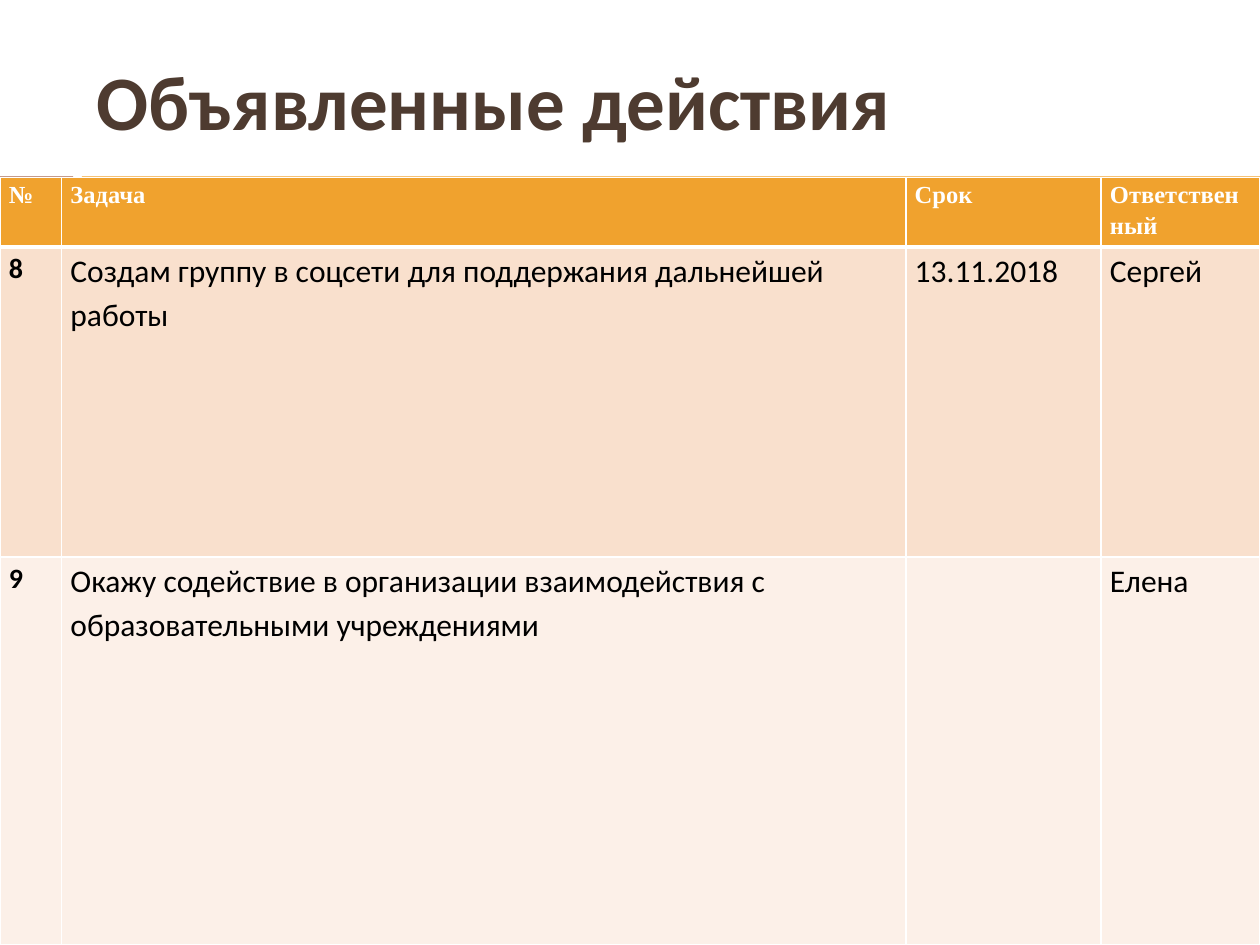
from dataclasses import dataclass

from lxml.etree import SubElement
from pptx import Presentation
from pptx.dml.color import RGBColor as Rgb
from pptx.enum.shapes import MSO_SHAPE as Shape
from pptx.enum.text import MSO_ANCHOR as Anchor
from pptx.oxml.ns import qn
from pptx.util import Inches, Pt


@dataclass(frozen=True)
class TextStyle:
    font: str
    size: int
    color: str
    bold: bool = False


@dataclass(frozen=True)
class Theme:
    title: TextStyle = TextStyle("Calibri", 44, "4E3B30", True)
    header: TextStyle = TextStyle("Times New Roman", 14, "FFFFFF", True)
    number: TextStyle = TextStyle("Calibri", 16, "000000", True)
    body: TextStyle = TextStyle("Calibri", 18, "000000")
    accent_fill: str = "A5644E"
    header_fill: str = "F0A22E"
    odd_fill: str = "F9E0CD"
    even_fill: str = "FCF0E8"
    border: str = "FFFFFF"
    thin: int = 1
    thick: int = 3


@dataclass(frozen=True)
class Band:
    left: float
    width: float
    fill: str


@dataclass(frozen=True)
class TableRow:
    texts: tuple[str, ...]
    height: float
    fill: str
    first_style: TextStyle
    style: TextStyle


THEME = Theme()
BANDS = (Band(0, 0.58, THEME.accent_fill), Band(0.65, 9.35, THEME.header_fill))
COLUMN_WIDTHS = (0.49, 6.7, 1.55, 1.26)
ROWS = (
    TableRow(("№", "Задача", "Срок", "Ответственный"),
             0.55, THEME.header_fill, THEME.header, THEME.header),
    TableRow(("8", "Создам группу в соцсети для поддержания дальнейшей работы",
              "13.11.2018", "Сергей"),
             2.46, THEME.odd_fill, THEME.number, THEME.body),
    TableRow(("9", "Окажу содействие в организации взаимодействия с "
              "образовательными учреждениями", "", "Елена"),
             3.08, THEME.even_fill, THEME.number, THEME.body),
)


def style_text(para, style: TextStyle) -> None:
    for span in para.runs:
        span.font.name = style.font
        span.font.size = Pt(style.size)
        span.font.bold = style.bold
        span.font.color.rgb = Rgb.from_string(style.color)


def add_band(page, band: Band) -> None:
    bar = page.shapes.add_shape(
        Shape.RECTANGLE, Inches(band.left), Inches(1.4), Inches(band.width), Inches(0.25)
    )
    bar.shadow.inherit = False
    bar.fill.solid()
    bar.fill.fore_color.rgb = Rgb.from_string(band.fill)
    bar.line.fill.background()


def add_title(page, text: str) -> None:
    box = page.shapes.add_textbox(Inches(0.67), Inches(0.25), Inches(8.92), Inches(1.08))
    frame = box.text_frame
    frame.word_wrap = True
    frame.vertical_anchor = Anchor.MIDDLE
    frame.text = text
    style_text(frame.paragraphs[0], THEME.title)


def set_borders(cell, top: int, bottom: int) -> None:
    properties = cell._tc.get_or_add_tcPr()
    widths = {"L": THEME.thin, "R": THEME.thin, "T": top, "B": bottom}
    for index, (side, width) in enumerate(widths.items()):
        line = SubElement(properties, qn(f"a:ln{side}"), w=str(Pt(width)))
        fill = SubElement(line, qn("a:solidFill"))
        SubElement(fill, qn("a:srgbClr"), val=THEME.border)
        properties.insert(index, line)


def fill_cell(cell, text: str, fill: str, style: TextStyle) -> None:
    cell.fill.solid()
    cell.fill.fore_color.rgb = Rgb.from_string(fill)
    cell.margin_left = cell.margin_right = Inches(0.07)
    cell.margin_top = cell.margin_bottom = 0
    cell.text_frame.text = text
    para = cell.text_frame.paragraphs[0]
    para.line_spacing = 1.15
    para.space_after = Pt(10)
    style_text(para, style)


def add_task_table(page, rows: tuple[TableRow, ...]) -> None:
    height = sum(row.height for row in rows)
    table = page.shapes.add_table(
        len(rows), len(COLUMN_WIDTHS), 0, Inches(1.41), Inches(10), Inches(height)
    ).table
    for column, width in zip(table.columns, COLUMN_WIDTHS):
        column.width = Inches(width)
    for row_index, row in enumerate(rows):
        table.rows[row_index].height = Inches(row.height)
        top = THEME.thick if row_index == 1 else THEME.thin
        bottom = THEME.thick if row_index == 0 else THEME.thin
        for column_index, text in enumerate(row.texts):
            cell = table.cell(row_index, column_index)
            style = row.style if column_index else row.first_style
            fill_cell(cell, text, row.fill, style)
            set_borders(cell, top, bottom)


def main() -> None:
    deck = Presentation()
    deck.slide_width, deck.slide_height = Inches(10), Inches(7.5)
    page = deck.slides.add_slide(deck.slide_layouts[6])
    for band in BANDS:
        add_band(page, band)
    add_title(page, "Объявленные действия")
    add_task_table(page, ROWS)
    deck.save("out.pptx")


if __name__ == "__main__":
    main()
